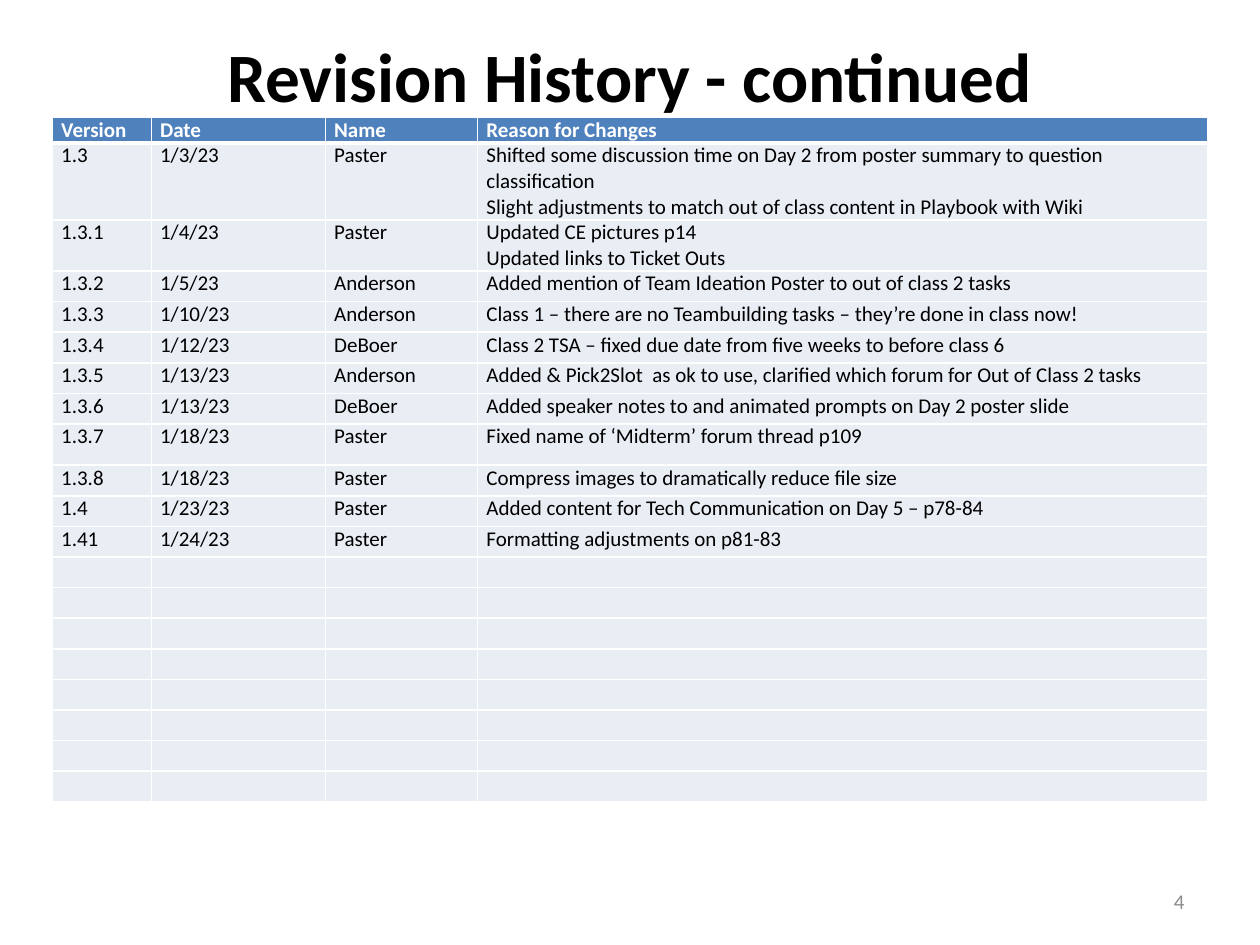
from lxml.etree import SubElement
from pptx import Presentation
from pptx.dml.color import RGBColor
from pptx.enum.text import MSO_ANCHOR, MSO_AUTO_SIZE, PP_ALIGN
from pptx.oxml.ns import qn
from pptx.util import Pt

PX = 6350
FONT = "Calibri"
WHITE, BLACK, GRAY = "FFFFFF", "000000", "8C8C8C"
BLUE, PALE = "4F81BD", "E9EDF4"

HEADER = ["Version", "Date", "Name", "Reason for Changes"]
REVISIONS = [
    ["1.3", "1/3/23", "Paster",
     "Shifted some discussion time on Day 2 from poster summary to question classification\n"
     "Slight adjustments to match out of class content in Playbook with Wiki"],
    ["1.3.1", "1/4/23", "Paster", "Updated CE pictures p14\nUpdated links to Ticket Outs"],
    ["1.3.2", "1/5/23", "Anderson", "Added mention of Team Ideation Poster to out of class 2 tasks"],
    ["1.3.3", "1/10/23", "Anderson",
     "Class 1 – there are no Teambuilding tasks – they’re done in class now!"],
    ["1.3.4", "1/12/23", "DeBoer", "Class 2 TSA – fixed due date from five weeks to before class 6"],
    ["1.3.5", "1/13/23", "Anderson",
     "Added & Pick2Slot  as ok to use, clarified which forum for Out of Class 2 tasks"],
    ["1.3.6", "1/13/23", "DeBoer",
     "Added speaker notes to and animated prompts on Day 2 poster slide"],
    ["1.3.7", "1/18/23", "Paster", "Fixed name of ‘Midterm’ forum thread p109"],
    ["1.3.8", "1/18/23", "Paster", "Compress images to dramatically reduce file size"],
    ["1.4", "1/23/23", "Paster", "Added content for Tech Communication on Day 5 – p78-84"],
    ["1.41", "1/24/23", "Paster", "Formatting adjustments on p81-83"],
]
SPARE_ROWS = 8
COL_WIDTHS = [113, 199, 174, 834]
ROW_HEIGHT = 35
ROW_HEIGHTS = {0: 10, 1: 43, 8: 47}


def rgb(color):
    return RGBColor.from_string(color)


class Deck:
    def __init__(self, width, height):
        self.prs = Presentation()
        self.prs.slide_width, self.prs.slide_height = width * PX, height * PX
        self.s = self.prs.slides.add_slide(self.prs.slide_layouts[5])

    def run(self, p, text, size, color, bold=False):
        r = p.add_run()
        r.text = text
        r.font.name, r.font.size, r.font.bold = FONT, Pt(size), bold
        r.font.color.rgb = rgb(color)

    def title(self, x, y, w, h, text, size):
        sp = self.s.shapes.title
        sp.left, sp.top, sp.width, sp.height = [v * PX for v in (x, y, w, h)]
        tf = sp.text_frame
        tf.auto_size, tf.vertical_anchor = MSO_AUTO_SIZE.NONE, MSO_ANCHOR.MIDDLE
        p = tf.paragraphs[0]
        p.alignment = PP_ALIGN.CENTER
        self.run(p, text, size, BLACK, True)
        p.add_line_break()
        SubElement(p._p[-1], qn("a:rPr"), sz=str(round(size * 100)))

    def text(self, x, y, w, h, text, size, color, align):
        tf = self.s.shapes.add_textbox(*[v * PX for v in (x, y, w, h)]).text_frame
        tf.word_wrap, tf.vertical_anchor = True, MSO_ANCHOR.MIDDLE
        p = tf.paragraphs[0]
        p.alignment = align
        self.run(p, text, size, color)

    def borders(self, cell, top, bottom):
        tcPr = cell._tc.get_or_add_tcPr()
        for side, width in (("L", 1), ("R", 1), ("T", top), ("B", bottom)):
            ln = SubElement(tcPr, qn(f"a:ln{side}"), w=str(Pt(width)))
            SubElement(SubElement(ln, qn("a:solidFill")), qn("a:srgbClr"), val=WHITE)

    def cell(self, cell, text, row, size):
        header = row == 0
        cell.margin_left = cell.margin_right = 10 * PX
        cell.margin_top = cell.margin_bottom = 0
        self.borders(cell, 3 if row == 1 else 1, 3 if header else 1)
        cell.fill.solid()
        cell.fill.fore_color.rgb = rgb(BLUE if header else PALE)
        tf = cell.text_frame
        for i, line in enumerate(text.split("\n")):
            p = tf.add_paragraph() if i else tf.paragraphs[0]
            if line:
                self.run(p, line, size, WHITE if header else BLACK, header)
            else:
                SubElement(p._p, qn("a:endParaRPr"), sz=str(size * 100))

    def table(self, x, y, rows, widths, heights, size):
        tbl = self.s.shapes.add_table(
            len(rows), len(widths), x * PX, y * PX, sum(widths) * PX, sum(heights) * PX).table
        for col, width in zip(tbl.columns, widths):
            col.width = width * PX
        for i, (row, height) in enumerate(zip(rows, heights)):
            tbl.rows[i].height = height * PX
            for j, text in enumerate(row):
                self.cell(tbl.cell(i, j), text, i, size)


def main():
    deck = Deck(1440, 1080)
    deck.title(72, 43, 1296, 180, "Revision History - continued", 39.6)
    rows = [HEADER] + REVISIONS + [[""] * len(HEADER)] * SPARE_ROWS
    heights = [ROW_HEIGHTS.get(i, ROW_HEIGHT) for i in range(len(rows))]
    deck.table(60, 134, rows, COL_WIDTHS, heights, 12)
    deck.text(1032, 1001, 336, 58, "4", 12, GRAY, PP_ALIGN.RIGHT)
    deck.prs.save("out.pptx")


if __name__ == "__main__":
    main()
